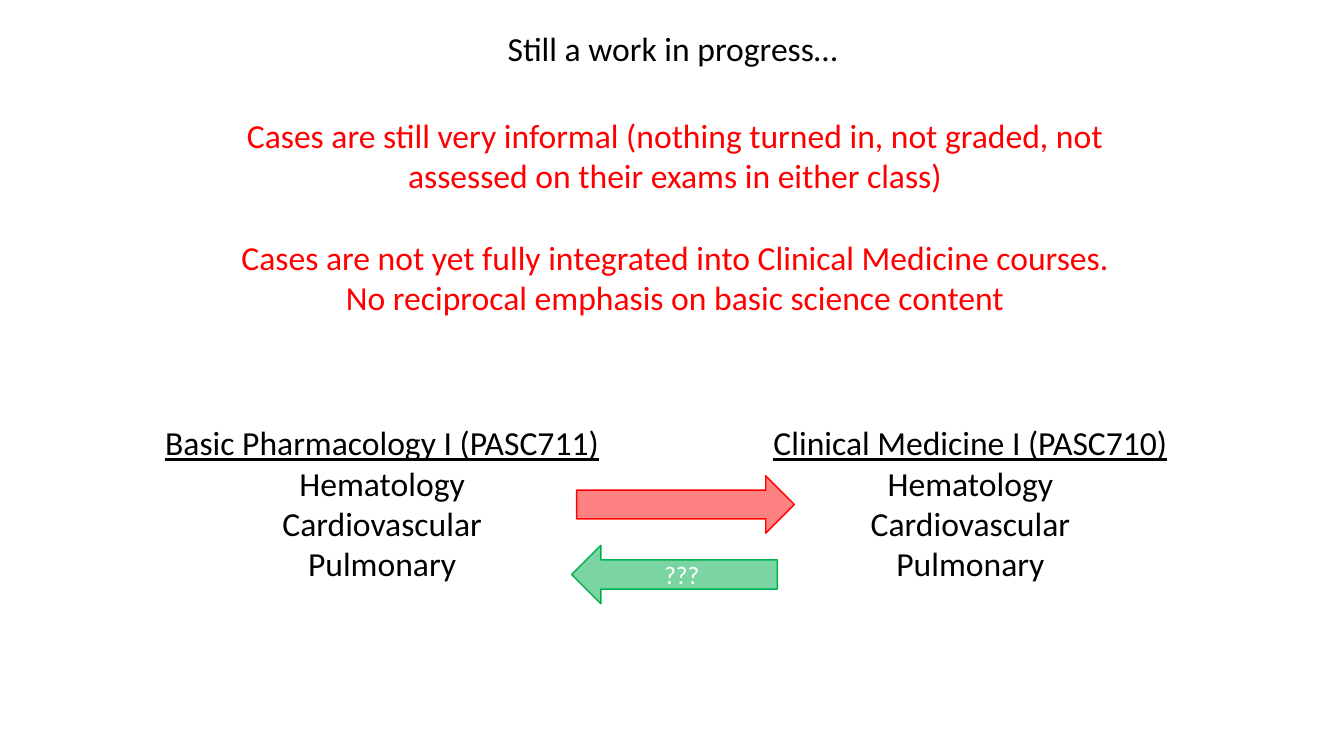
from pptx import Presentation, util as u
from pptx.dml.color import RGBColor
from pptx.enum import shapes, text
from pptx.oxml.ns import qn
from lxml import etree

PX = 9144
COLORS = {"black": "000000", "red": "FF0000", "green": "00B050", "white": "FFFFFF"}
FONT = "Calibri"
BODY_SIZE = 24
LINE_GAP = 29.3

HEADING = ("Still a work in progress…", (491, 23, 352, 50))
LIMITS = ([
    "Cases are still very informal (nothing turned in, not graded, not assessed on their exams in either class)",
    "Cases are not yet fully integrated into Clinical Medicine courses. No reciprocal emphasis on basic science content",
], (213, 109, 913, 212))
TOPICS = ["Hematology", "Cardiovascular", "Pulmonary"]
COURSES = [
    ("Basic Pharmacology I (PASC711)", (142, 414, 474, 172)),
    ("Clinical Medicine I (PASC710)", (733, 414, 459, 172)),
]
ARROWS = [
    ("RIGHT_ARROW", (572, 472, 216, 57), "red", 49, ""),
    ("LEFT_ARROW", (567, 541, 204, 58), "green", 52, "???"),
]


def emu(box):
    return [length * PX for length in box]


def color(name):
    return RGBColor.from_string(COLORS[name])


def write(frame, lines, ink, size=BODY_SIZE):
    frame.word_wrap = True
    frame.text = "\n".join(lines)
    for paragraph in frame.paragraphs:
        paragraph.alignment = text.PP_ALIGN.CENTER
        paragraph.font.name = FONT
        paragraph.font.size = u.Pt(size)
        paragraph.font.color.rgb = color(ink)
    return frame.paragraphs


def add_lines(slide, lines, box, ink):
    return write(slide.shapes.add_textbox(*emu(box)).text_frame, lines, ink)


def add_arrow(slide, preset, box, tint, opacity, label):
    arrow = slide.shapes.add_shape(shapes.MSO_SHAPE[preset], *emu(box))
    arrow.shadow.inherit = False
    arrow.fill.solid()
    arrow.fill.fore_color.rgb = color(tint)
    shade = arrow.fill._xPr.find(qn("a:solidFill"))[0]
    etree.SubElement(shade, qn("a:alpha"), val=str(opacity * 1000))
    arrow.line.color.rgb = color(tint)
    arrow.line.width = u.Pt(1)
    if label:
        arrow.text_frame.vertical_anchor = text.MSO_ANCHOR.MIDDLE
        write(arrow.text_frame, [label], "white", 18)


def main():
    deck = Presentation()
    deck.slide_width, deck.slide_height = emu((1333, 750))
    slide = deck.slides.add_slide(deck.slide_layouts[5])

    wording, box = HEADING
    heading = slide.shapes.title
    heading.left, heading.top, heading.width, heading.height = emu(box)
    write(heading.text_frame, [wording], "black")
    heading.text_frame.word_wrap = False
    heading.text_frame.auto_size = text.MSO_AUTO_SIZE.NONE

    limits = add_lines(slide, *LIMITS, "red")
    limits[1].space_before = u.Pt(LINE_GAP)

    for course, box in COURSES:
        add_lines(slide, [course, *TOPICS], box, "black")[0].font.underline = True
    for arrow in ARROWS:
        add_arrow(slide, *arrow)

    deck.save("out.pptx")


if __name__ == "__main__":
    main()
